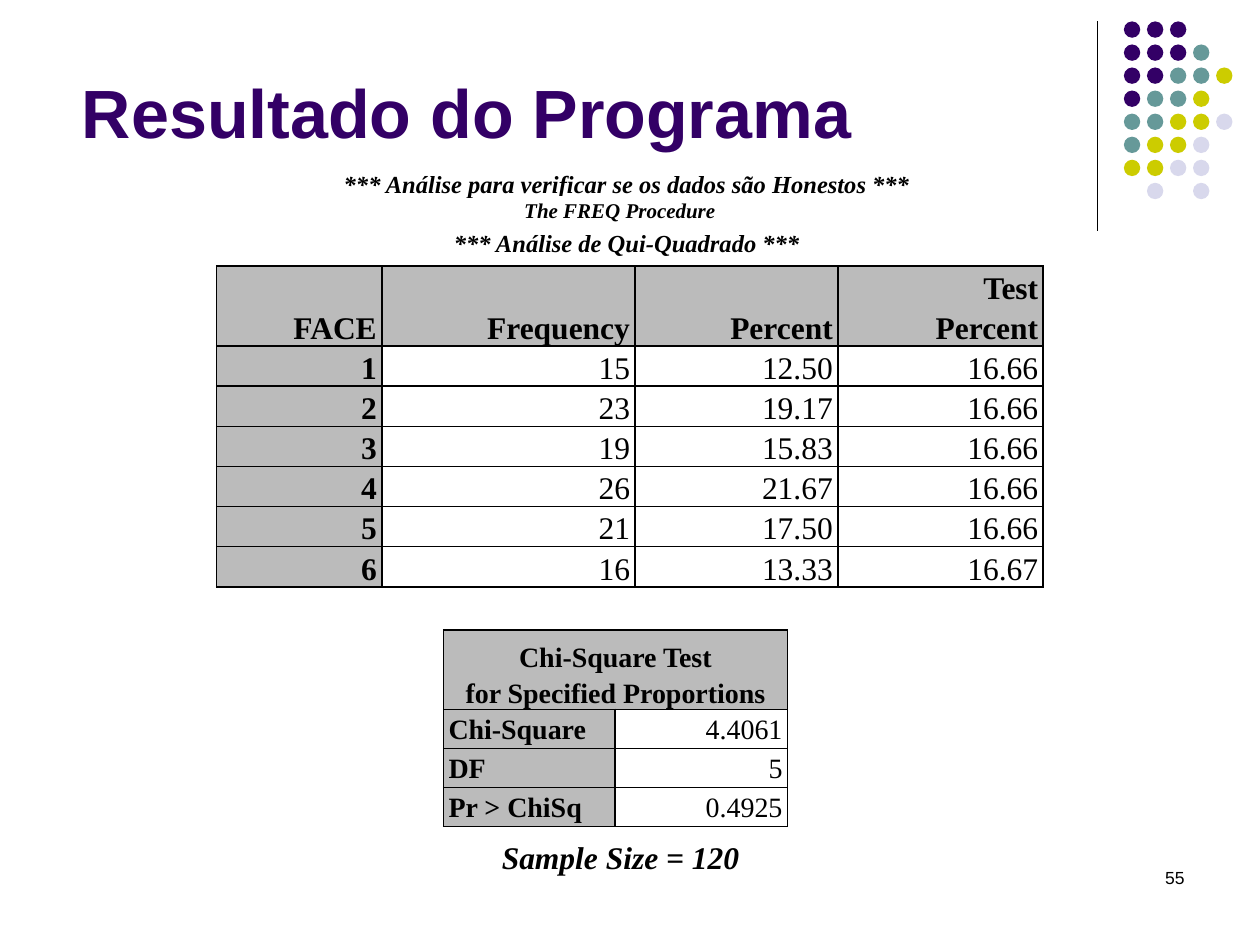
from lxml.etree import SubElement
from pptx import Presentation
from pptx.dml.color import RGBColor
from pptx.enum.shapes import MSO_CONNECTOR, MSO_SHAPE
from pptx.enum.text import MSO_ANCHOR, MSO_AUTO_SIZE, PP_ALIGN
from pptx.oxml.ns import qn
from pptx.util import Inches, Pt

BLACK = RGBColor(0x00, 0x00, 0x00)
WHITE = RGBColor(0xFF, 0xFF, 0xFF)
GRAY = RGBColor(0xBB, 0xBB, 0xBB)
PURPLE = RGBColor(0x33, 0x00, 0x66)
TEAL = RGBColor(0x66, 0x99, 0x99)
OLIVE = RGBColor(0xCC, 0xCC, 0x00)
LILAC = RGBColor(0xD8, 0xD8, 0xEC)

DOT_COLORS = {"P": PURPLE, "T": TEAL, "O": OLIVE, "L": LILAC}
DOT_ROWS = ["PPP", "PPPT", "PPTTO", "PTTO", "TTOOL", "TOOL", "OOLL", " L L"]

FREQUENCIES = [
    ["FACE", "Frequency", "Percent", "Test\nPercent"],
    ["1", "15", "12.50", "16.66"],
    ["2", "23", "19.17", "16.66"],
    ["3", "19", "15.83", "16.66"],
    ["4", "26", "21.67", "16.66"],
    ["5", "21", "17.50", "16.66"],
    ["6", "16", "13.33", "16.67"],
]
CHI_SQUARE = [
    ["Chi-Square Test\nfor Specified Proportions", ""],
    ["Chi-Square", "4.4061"],
    ["DF", "5"],
    ["Pr > ChiSq", "0.4925"],
]


class SlideBuilder:
    sans = "Arial"
    serif = "Times New Roman"

    def __init__(self, page):
        self.page = page

    def style(self, para, font, size, color=BLACK, bold=False, italic=False,
              align=PP_ALIGN.LEFT):
        para.alignment = align
        para.font.name = font
        para.font.size = Pt(size)
        para.font.color.rgb = color
        para.font.bold = bold
        para.font.italic = italic

    def title(self, text, left, top, width, height):
        box = self.page.shapes.title
        box.left, box.top = Inches(left), Inches(top)
        box.width, box.height = Inches(width), Inches(height)
        frame = box.text_frame
        frame.text = text
        frame.auto_size = MSO_AUTO_SIZE.NONE
        frame.vertical_anchor = MSO_ANCHOR.BOTTOM
        self.style(frame.paragraphs[0], self.sans, 39, PURPLE, bold=True)

    def page_number(self, text, left, top, width, height):
        box = self.page.shapes.add_textbox(
            Inches(left), Inches(top), Inches(width), Inches(height))
        box.text_frame.word_wrap = True
        box.text_frame.text = text
        self.style(box.text_frame.paragraphs[0], self.sans, 10,
                   align=PP_ALIGN.RIGHT)

    def vertical_line(self, x, top, bottom):
        line = self.page.shapes.add_connector(
            MSO_CONNECTOR.STRAIGHT,
            Inches(x), Inches(top), Inches(x), Inches(bottom))
        line.line.color.rgb = BLACK
        line.line.width = Pt(0.75)
        SubElement(line._element.spPr, qn("a:effectLst"))

    def dots(self, left, top, pitch, size):
        for row, pattern in enumerate(DOT_ROWS):
            for column, key in enumerate(pattern):
                if key == " ":
                    continue
                dot = self.page.shapes.add_shape(
                    MSO_SHAPE.OVAL,
                    Inches(left + column * pitch), Inches(top + row * pitch),
                    Inches(size), Inches(size))
                dot.shadow.inherit = False
                dot.fill.solid()
                dot.fill.fore_color.rgb = DOT_COLORS[key]
                dot.line.fill.background()

    def table(self, left, top, widths, heights):
        table = self.page.shapes.add_table(
            len(heights), len(widths), Inches(left), Inches(top),
            Inches(sum(widths)), Inches(sum(heights))).table
        table.first_row = table.horz_banding = False
        for column, width in zip(table.columns, widths):
            column.width = Inches(width)
        for row, height in zip(table.rows, heights):
            row.height = Inches(height)
        return table

    def cell(self, cell, text, size, fill, margin, border=False,
             anchor=MSO_ANCHOR.TOP, **style):
        cell.margin_left = cell.margin_right = Inches(margin)
        cell.margin_top = cell.margin_bottom = 0
        cell.vertical_anchor = anchor
        if border:
            self.borders(cell)
        cell.fill.solid()
        cell.fill.fore_color.rgb = fill
        para = cell.text_frame.paragraphs[0]
        para.line_spacing = 1.15
        self.style(para, self.serif, size, **style)
        for index, line in enumerate(text.split("\n")):
            if index:
                para.add_line_break()
            if line:
                para.add_run().text = line

    def borders(self, cell):
        properties = cell._tc.get_or_add_tcPr()
        for side in ("a:lnL", "a:lnR", "a:lnT", "a:lnB"):
            line = SubElement(properties, qn(side), w=str(Pt(1)))
            fill = SubElement(line, qn("a:solidFill"))
            SubElement(fill, qn("a:srgbClr"), val=str(BLACK))

    def captions(self, lines, size, left, top, width, heights):
        """Stack centred bold italic lines in a one-column table."""
        table = self.table(left, top, [width], heights)
        for row, text in enumerate(lines):
            self.cell(table.cell(row, 0), text, size if text else 10, WHITE,
                      0.01, bold=True, italic=True, align=PP_ALIGN.CENTER)

    def data_table(self, rows, size, left, top, widths, heights,
                   label_align, header_align):
        """Draw a bordered table with a gray header row and label column."""
        table = self.table(left, top, widths, heights)
        for r, values in enumerate(rows):
            for c, text in enumerate(values):
                heading = r == 0 or c == 0
                align = (header_align if r == 0 else
                         label_align if c == 0 else PP_ALIGN.RIGHT)
                self.cell(table.cell(r, c), text, size,
                          GRAY if heading else WHITE, 0.04, border=True,
                          anchor=MSO_ANCHOR.TOP if r else MSO_ANCHOR.BOTTOM,
                          bold=heading, align=align)
        return table


def main():
    deck = Presentation()
    deck.slide_width, deck.slide_height = Inches(10), Inches(7.5)
    builder = SlideBuilder(deck.slides.add_slide(deck.slide_layouts[5]))

    builder.vertical_line(8.71, 0.17, 1.83)
    builder.dots(8.92, 0.17, pitch=0.183, size=0.13)
    builder.title("Resultado do Programa", 0.55, -0.16, 8.25, 1.42)

    builder.captions(
        ["*** Análise para verificar se os dados são Honestos ***", "",
         "*** Análise de Qui-Quadrado ***"],
        14, 1.64, 1.33, 6.67, [0.25, 0.22, 0.25])
    builder.captions(["The FREQ Procedure"], 12, 3.98, 1.56, 1.88, [0.23])

    builder.data_table(
        FREQUENCIES, 18, 1.72, 2.11, [1.31, 2.01, 1.61, 1.63],
        [0.63] + [0.31] * 6, PP_ALIGN.RIGHT, PP_ALIGN.RIGHT)
    chi_table = builder.data_table(
        CHI_SQUARE, 16, 3.52, 5, [1.36, 1.37],
        [0.63] + [0.31] * 3, PP_ALIGN.LEFT, PP_ALIGN.CENTER)
    chi_table.cell(0, 0).merge(chi_table.cell(0, 1))

    builder.captions(["Sample Size = 120"], 18, 3.36, 6.64, 3.13, [0.34])
    builder.page_number("55", 7.17, 6.83, 2.33, 0.5)
    deck.save("out.pptx")


if __name__ == "__main__":
    main()
